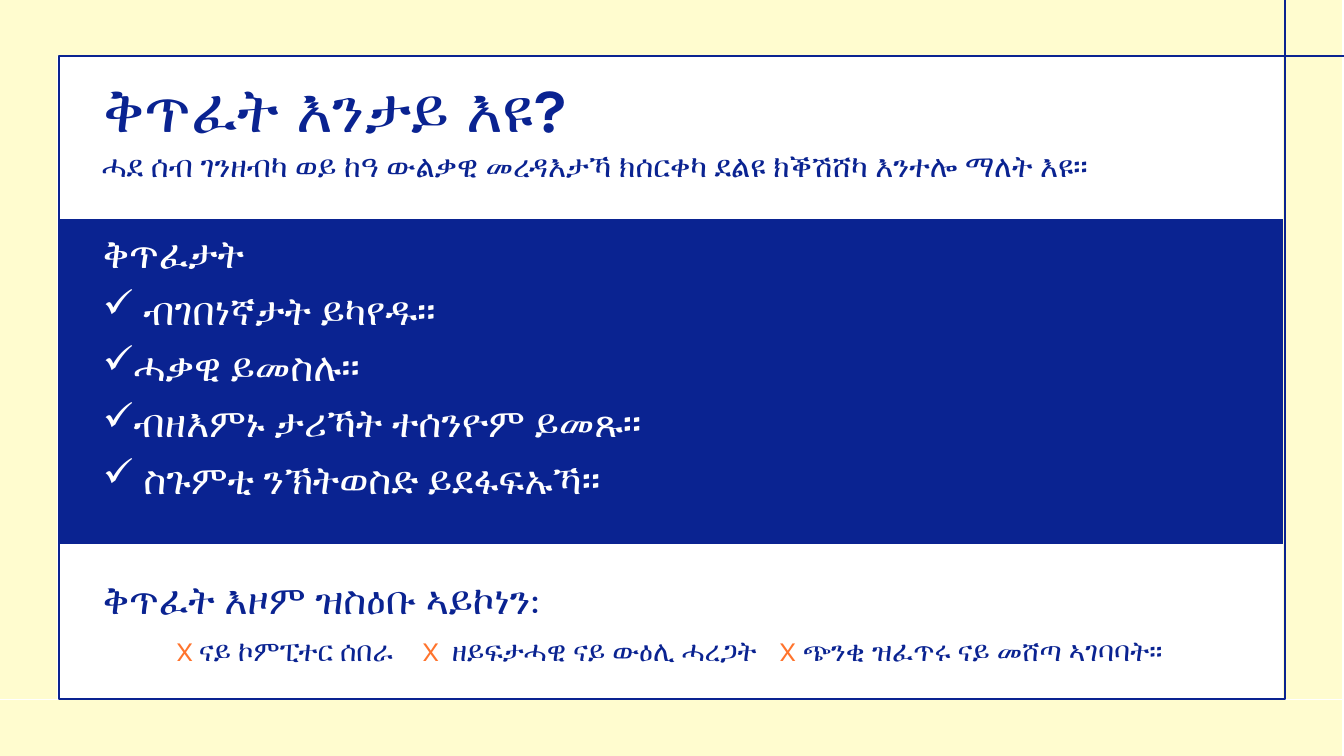
"""Build a Tigrinya slide that explains what a scam is and is not."""
from lxml.etree import SubElement
from pptx import Presentation
from pptx.dml.color import RGBColor
from pptx.enum.shapes import MSO_SHAPE
from pptx.enum.text import MSO_ANCHOR, MSO_AUTO_SIZE, PP_ALIGN
from pptx.oxml.ns import qn
from pptx.util import Pt

PX = 914400 / 100.8
COLORS = {"navy": "0A2391", "cream": "FFFCCF", "orange": "FF742D", "white": "FFFFFF"}


def add_rect(left, top, width, height, fill=None, line=None):
    rect = page.shapes.add_shape(
        MSO_SHAPE.RECTANGLE, *[round(n * PX) for n in (left, top, width, height)])
    rect.shadow.inherit = False
    if fill:
        rect.fill.solid()
        rect.fill.fore_color.rgb = RGBColor.from_string(COLORS[fill])
    else:
        rect.fill.background()
    if line:
        rect.line.color.rgb = RGBColor.from_string(COLORS[line])
        rect.line.width = Pt(1.5)
    else:
        rect.line.fill.background()


def add_span(para, text, size, color, font="Karla", bold=False):
    span = para.add_run()
    span.text = text
    span.font.size = Pt(size)
    span.font.name = font
    span.font.bold = bold
    span.font.color.rgb = RGBColor.from_string(COLORS[color])


deck = Presentation()
deck.slide_width, deck.slide_height = round(1344 * PX), round(756 * PX)
page = deck.slides.add_slide(deck.slide_layouts[5])

add_rect(59, 220, 1224, 323, "navy", "navy")
for bar in [(-2, 0, 1344, 56), (-2, 700, 1344, 56), (-2, 56, 59, 643), (1283, 56, 59, 643)]:
    add_rect(*bar, fill="cream")
add_rect(59, 56, 1226, 643, line="navy")
add_rect(1285, -13, 72, 69, line="navy")

title = page.shapes.title
scams, not_scams, meaning = [page.shapes.add_textbox(0, 0, 0, 0) for _ in range(3)]
for box, left, top, height in [(title, 93, 40, 146), (scams, 93, 230, 295),
                               (not_scams, 93, 576, 120), (meaning, 92, 152, 61)]:
    box.left, box.top = round(left * PX), round(top * PX)
    box.width, box.height = round(1159 * PX), round(height * PX)
    box.text_frame.word_wrap = True
    box.text_frame.auto_size = MSO_AUTO_SIZE.NONE

title.text_frame.vertical_anchor = MSO_ANCHOR.MIDDLE
para = title.text_frame.paragraphs[0]
para.alignment = PP_ALIGN.LEFT
para.line_spacing = 0.9
add_span(para, "ቅጥፈት እንታይ እዩ?", 44, "navy", bold=True)

para = meaning.text_frame.paragraphs[0]
para.line_spacing = 0.7
add_span(para, "ሓደ ሰብ ገንዘብካ ወይ ከዓ ውልቃዊ መረዳእታኻ ክሰርቀካ ደልዩ ክ", 21.7, "navy")
add_span(para, "ቕሽሸካ እንተሎ ማለት እዩ፡፡", 21.7, "navy", font="Calibri")

para = scams.text_frame.paragraphs[0]
para.line_spacing = 0.9
add_span(para, "ቅጥፈታት", 28, "white")
for trait in [" ብገበነኛታት ይካየዱ፡፡", "ሓቃዊ ይመስሉ፡፡",
              "ብዘእምኑ ታሪኻት ተሰንዮም ይመጹ፡፡", " ስጉምቲ ንኽትወስድ ይደፋፍኡኻ፡፡"]:
    para = scams.text_frame.add_paragraph()
    para.line_spacing = 0.9
    para.space_before = Pt(10)
    props = para._p.get_or_add_pPr()
    props.set("marL", str(round(25 * PX)))
    props.set("indent", str(round(-25 * PX)))
    SubElement(props, qn("a:buChar"), char="✓")
    add_span(para, trait, 28, "white")

para = not_scams.text_frame.paragraphs[0]
para.line_spacing = 0.9
add_span(para, "ቅጥፈት እዞም ዝስዕቡ ኣይኮነን:", 28, "navy")
para = not_scams.text_frame.add_paragraph()
para.line_spacing = 0.9
para.space_before = Pt(10)
tabs = SubElement(para._p.get_or_add_pPr(), qn("a:tabLst"))
for cross_x, text_x, text in [(73, 96, "ናይ ኮምፒተር ሰበራ"),
                              (319, 349, "ዘይፍታሓዊ ናይ ውዕሊ ሓረጋት"),
                              (676, 700, "ጭንቂ ዝፈጥሩ ናይ መሸጣ ኣገባባት፡፡")]:
    for stop in (cross_x, text_x):
        SubElement(tabs, qn("a:tab"), pos=str(round(stop * PX)), algn="l")
    add_span(para, "\tX", 20, "orange")
    add_span(para, "\t" + text, 20, "navy")

deck.save("out.pptx")
